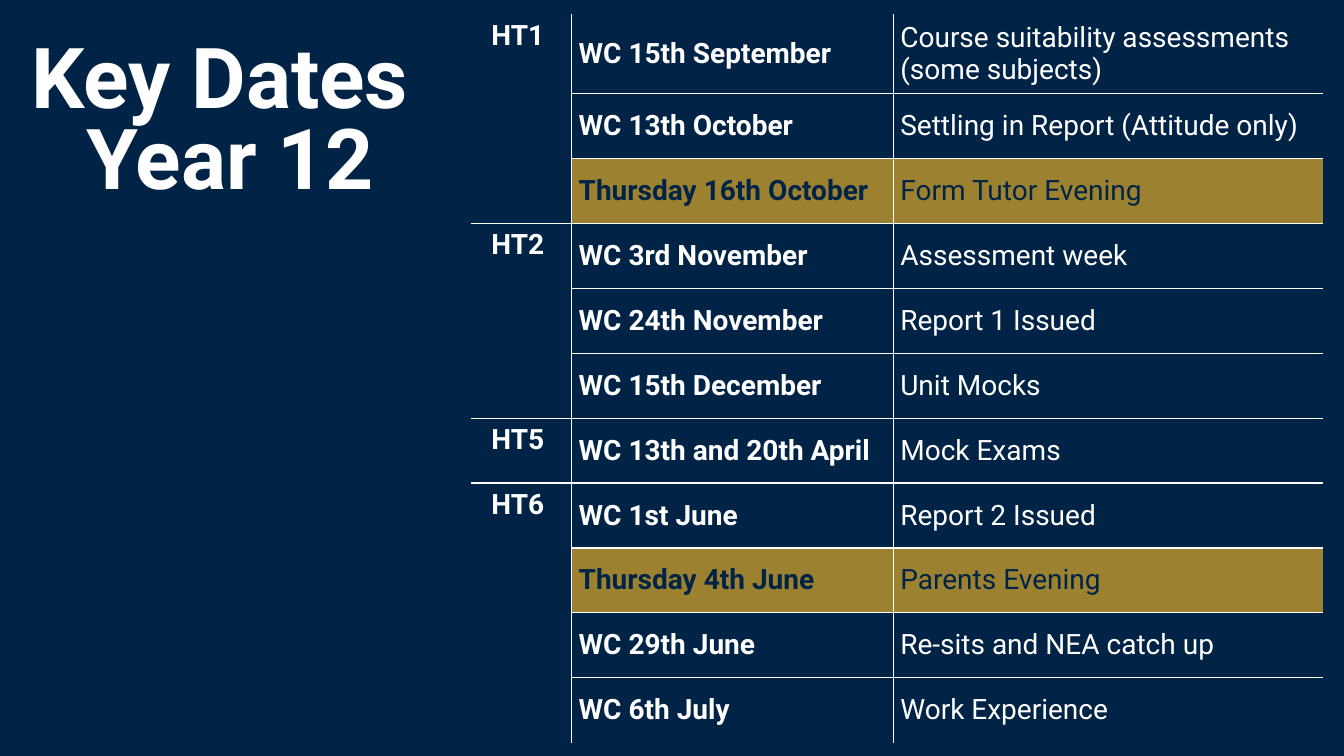
"""Build the Year 12 key dates slide: a title beside a table grouped by half term."""
from dataclasses import dataclass

from lxml.etree import SubElement
from pptx import Presentation
from pptx.dml.color import RGBColor
from pptx.enum.text import MSO_ANCHOR, MSO_AUTO_SIZE, PP_ALIGN
from pptx.oxml.ns import qn
from pptx.util import Inches, Pt


@dataclass(frozen=True)
class Theme:
    font: str = "Roboto"
    navy: str = "012346"
    gold: str = "9C8230"
    white: str = "FFFFFF"
    title_size: int = 60
    table_size: int = 20
    border_width: int = 1


theme = Theme()


def write(para, text, size=theme.table_size, color=theme.white, bold=True,
          align=PP_ALIGN.LEFT, line_spacing=None):
    """Add formatted text to a paragraph."""
    para.alignment = align
    if line_spacing:
        para.line_spacing = line_spacing
    span = para.add_run()
    span.text = text
    span.font.name = theme.font
    span.font.size = Pt(size)
    span.font.bold = bold
    span.font.color.rgb = RGBColor.from_string(color)


def set_borders(cell, **sides):
    """Draw or clear the four sides of a cell."""
    properties = cell._tc.get_or_add_tcPr()
    for side in ("L", "R", "T", "B"):
        line = SubElement(properties, qn(f"a:ln{side}"), w=str(Pt(theme.border_width)))
        if sides[side]:
            fill = SubElement(line, qn("a:solidFill"))
            SubElement(fill, qn("a:srgbClr"), val=theme.white)
        else:
            SubElement(line, qn("a:noFill"))


half_terms = [
    ("HT1 ", [
        ("WC 15th September", "Course suitability assessments (some subjects)"),
        ("WC 13th October", "Settling in Report (Attitude only)"),
        ("Thursday 16th October", "Form Tutor Evening"),
    ]),
    ("HT2 ", [
        ("WC 3rd November", "Assessment week"),
        ("WC 24th November", "Report 1 Issued"),
        ("WC 15th December", "Unit Mocks"),
    ]),
    ("HT5 ", [
        ("WC 13th and 20th April ", "Mock Exams"),
    ]),
    ("HT6 ", [
        ("WC 1st June", "Report 2 Issued"),
        ("Thursday 4th June", "Parents Evening"),
        ("WC 29th June", "Re-sits and NEA catch up"),
        ("WC 6th July", "Work Experience"),
    ]),
]
evenings = {"Form Tutor Evening", "Parents Evening"}
row_count = sum(len(events) for _, events in half_terms)

deck = Presentation()
deck.slide_width, deck.slide_height = Inches(13.33), Inches(7.5)
page = deck.slides.add_slide(deck.slide_layouts[5])
page.background.fill.solid()
page.background.fill.fore_color.rgb = RGBColor.from_string(theme.navy)

title = page.shapes.title
title.left, title.top = Inches(0.01), Inches(0.28)
title.width, title.height = Inches(4.55), Inches(1.81)
frame = title.text_frame
frame.word_wrap = True
frame.auto_size = MSO_AUTO_SIZE.NONE
frame.vertical_anchor = MSO_ANCHOR.BOTTOM
title_format = dict(size=theme.title_size, align=PP_ALIGN.CENTER, line_spacing=0.8)
write(frame.paragraphs[0], "Key Dates ", **title_format)
write(frame.add_paragraph(), "Year 12", **title_format)

table_height, first_height = 7.23, 0.79
row_height = (table_height - first_height) / (row_count - 1)
table = page.shapes.add_table(row_count, 3, Inches(4.67), Inches(0.14),
                              Inches(8.45), Inches(table_height)).table
table.first_row = False
table.horz_banding = False
for column, width in zip(table.columns, (1, 3.19, 4.26)):
    column.width = Inches(width)
for index, table_row in enumerate(table.rows):
    table_row.height = Inches(row_height if index else first_height)

start = 0
for half_term, events in half_terms:
    end = start + len(events)
    for row, (date, event) in enumerate(events, start):
        label = half_term if row == start else ""
        for column, text in enumerate((label, date, event)):
            cell = table.cell(row, column)
            cell.margin_left = cell.margin_right = Inches(0.07)
            cell.margin_top = cell.margin_bottom = Inches(0.05)
            in_label = column == 0
            if in_label:
                top = row == start > 0
                bottom = end < row_count and row in (start, end - 1)
            else:
                top, bottom = row > 0, row < row_count - 1
            set_borders(cell, L=column > 0, R=column < 2, T=top, B=bottom)
            gold = event in evenings and not in_label
            cell.fill.solid()
            cell.fill.fore_color.rgb = RGBColor.from_string(theme.gold if gold else theme.navy)
            cell.vertical_anchor = MSO_ANCHOR.TOP if in_label else MSO_ANCHOR.MIDDLE
            if text:
                write(cell.text_frame.paragraphs[0], text, bold=column < 2,
                      color=theme.navy if gold else theme.white,
                      align=PP_ALIGN.CENTER if in_label else PP_ALIGN.LEFT)
    if len(events) > 1:
        table.cell(start, 0).merge(table.cell(end - 1, 0))
    start = end

deck.save("out.pptx")
